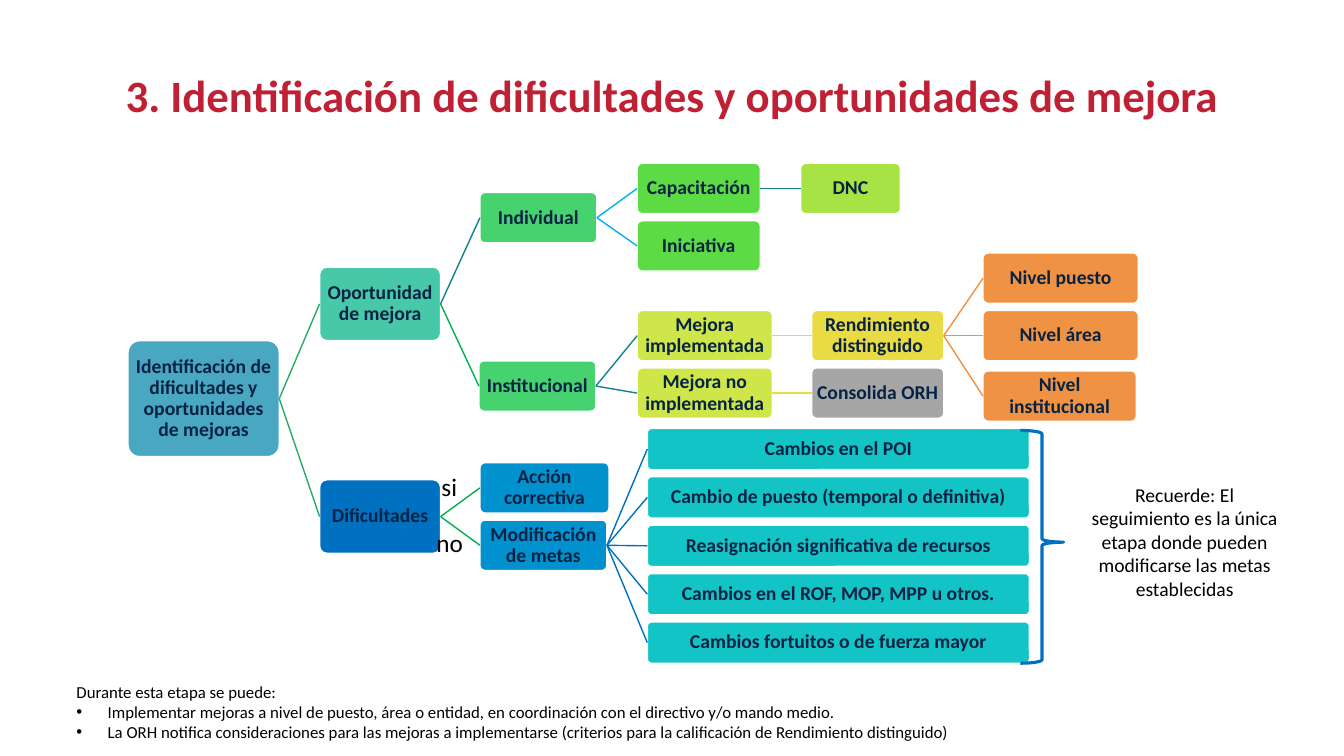
from lxml import etree
from pptx import Presentation, util as u
from pptx.dml.color import RGBColor
from pptx.enum import shapes, text
from pptx.oxml.ns import qn

PX = 9144
C = {
    "title": "BF2034", "ink": "072242", "black": "000000", "white": "FFFFFF",
    "root": "49A7C1", "teal": "47C9A9", "green": "45D26F", "grass": "5DDB44",
    "lime": "A7E344", "citron": "CEE64A", "yellow": "E9DB44", "orange": "F09244",
    "grey": "A6A6A6", "blue": "0070C0", "azure": "0191CE", "cyan": "12C4C5",
    "root_line": "2AAB65", "teal_line": "10828E", "sky_line": "00B0F0", "green_line": "00B050",
}
NODES = [
    ("Identificación de dificultades y oportunidades de mejoras", 0, 176, 150, 115, "root", None, None),
    ("Oportunidad de mejora", 190, 103, 120, 73, "teal",
     "Identificación de dificultades y oportunidades de mejoras", "root_line"),
    ("Individual", 349, 29, 116, 50, "green", "Oportunidad de mejora", "teal_line"),
    ("Capacitación", 505, 0, 122, 50, "grass", "Individual", "sky_line"),
    ("DNC", 667, 0, 99, 50, "lime", "Capacitación", "teal_line"),
    ("Iniciativa", 505, 57, 122, 50, "grass", "Individual", "sky_line"),
    ("Institucional", 348, 196, 116, 50, "green", "Oportunidad de mejora", "green_line"),
    ("Mejora implementada", 505, 146, 134, 50, "citron", "Institucional", "teal_line"),
    ("Rendimiento distinguido", 678, 146, 131, 50, "yellow", "Mejora implementada", "yellow"),
    ("Nivel puesto", 848, 89, 154, 50, "orange", "Rendimiento distinguido", "orange"),
    ("Nivel área", 848, 146, 154, 50, "orange", "Rendimiento distinguido", "orange"),
    ("Nivel institucional", 848, 206, 152, 50, "orange", "Rendimiento distinguido", "orange"),
    ("Mejora no implementada", 505, 203, 134, 50, "citron", "Institucional", "teal_line"),
    ("Consolida ORH", 678, 203, 131, 50, "grey", "Mejora no implementada", "yellow"),
    ("Dificultades", 190, 314, 120, 73, "blue",
     "Identificación de dificultades y oportunidades de mejoras", "root_line"),
    ("Acción correctiva", 349, 297, 128, 50, "azure", "Dificultades", "green_line"),
    ("Modificación de metas", 349, 354, 126, 50, "azure", "Dificultades", "green_line"),
]
CHANGES = [
    "Cambios en el POI",
    "Cambio de puesto (temporal o definitiva)",
    "Reasignación significativa de recursos",
    "Cambios en el ROF, MOP, MPP u otros.",
    "Cambios fortuitos o de fuerza mayor",
]
NODES += [(label, 515, 263 + 48 * i, 379, 41, "cyan", "Modificación de metas", "blue")
          for i, label in enumerate(CHANGES)]


def px(*lengths):
    """Turn px lengths into EMU."""
    return [u.Emu(n * PX) for n in lengths]


def rgb(name):
    """Return a palette colour."""
    return RGBColor.from_string(C[name])


def write(tf, lines, size, color, bold=False, align=text.PP_ALIGN.CENTER, spacing=None):
    """Fill a text frame with uniformly formatted paragraphs."""
    tf.text = "\n".join(lines)
    for p in tf.paragraphs:
        p.alignment = align
        p.line_spacing = spacing
        for r in p.runs:
            r.font.name, r.font.size, r.font.bold = "Calibri", u.Pt(size), bold
            r.font.color.rgb = rgb(color)


def textbox(s, box, lines, size, color="black", wrap=True, **style):
    """Add a text box and return its text frame."""
    tf = s.shapes.add_textbox(*px(*box)).text_frame
    tf.word_wrap = wrap
    write(tf, lines, size, color, **style)
    return tf


def node(s, box, label, fill):
    """Add one rounded tree node."""
    sp = s.shapes.add_shape(shapes.MSO_SHAPE.ROUNDED_RECTANGLE, *px(*box))
    sp.shadow.inherit = False
    sp.adjustments[0] = 0.1
    sp.fill.solid()
    sp.fill.fore_color.rgb = rgb(fill)
    sp.line.color.rgb = rgb("white")
    sp.line.width = u.Pt(1)
    tf = sp.text_frame
    tf.word_wrap = True
    tf.vertical_anchor = text.MSO_ANCHOR.MIDDLE
    tf.margin_left, tf.margin_top, tf.margin_right, tf.margin_bottom = px(2, 2, 2, 2)
    write(tf, [label], 14, "ink", bold=True, spacing=0.9)
    return sp


def branch(s, parent, child, color):
    """Join the right side of a parent to the left side of its child."""
    cn = s.shapes.add_connector(shapes.MSO_CONNECTOR.STRAIGHT, 0, 0, 0, 0)
    cn.begin_connect(parent, 3)
    cn.end_connect(child, 1)
    cn.line.color.rgb = rgb(color)
    cn.line.width = u.Pt(1)
    etree.SubElement(cn._element.spPr, qn("a:effectLst"))


def tree(s, box):
    """Draw the decision tree with its branch labels."""
    left, top = box[:2]
    placed = {}
    for label, x, y, w, h, fill, parent, line in NODES:
        placed[label] = node(s, (left + x, top + y, w, h), label, fill)
        if parent:
            branch(s, placed[parent], placed[label], line)
    for label, x, y, w in (("si", 301, 301, 36), ("no", 296, 356, 47)):
        textbox(s, (left + x, top + y, w, 40), [label], 18, wrap=False, align=text.PP_ALIGN.LEFT)


def reminder(s, box):
    """Draw the brace and the reminder beside it."""
    x, y, w, h = box
    sp = s.shapes.add_shape(shapes.MSO_SHAPE.RIGHT_BRACE, *px(x, y, 43, h))
    sp.shadow.inherit = False
    sp.adjustments[0], sp.adjustments[1] = 0.08, 0.48
    sp.fill.background()
    sp.line.color.rgb = rgb("blue")
    sp.line.width = u.Pt(2.25)
    note = "Recuerde: El seguimiento es la única etapa donde pueden modificarse las metas establecidas"
    textbox(s, (x + 59, y + 47, w - 59, 128), [note], 14)


def footnotes(s, box):
    """Write the closing remarks with bullets."""
    tf = textbox(s, box, [
        "Durante esta etapa se puede:",
        "Implementar mejoras a nivel de puesto, área o entidad, en coordinación con el directivo y/o mando medio.",
        "La ORH notifica consideraciones para las mejoras a implementarse "
        "(criterios para la calificación de Rendimiento distinguido)",
    ], 12, align=text.PP_ALIGN.JUSTIFY)
    for p in tf.paragraphs[1:]:
        pPr = p._p.get_or_add_pPr()
        pPr.set("marL", str(31 * PX))
        pPr.set("indent", str(-31 * PX))
        etree.SubElement(pPr, qn("a:buFont"), typeface="Arial")
        etree.SubElement(pPr, qn("a:buChar"), char="•")


def main():
    """Build the slide and save it."""
    prs = Presentation()
    prs.slide_width, prs.slide_height = px(1333, 750)
    s = prs.slides.add_slide(prs.slide_layouts[6])
    textbox(s, (92, 68, 1150, 56), ["3. Identificación de dificultades y oportunidades de mejora"],
            32, "title", bold=True, spacing=0.9)
    tree(s, (127, 162, 1002, 496))
    reminder(s, (1012, 427, 267, 231))
    footnotes(s, (66, 671, 1005, 71))
    prs.save("out.pptx")


if __name__ == "__main__":
    main()
